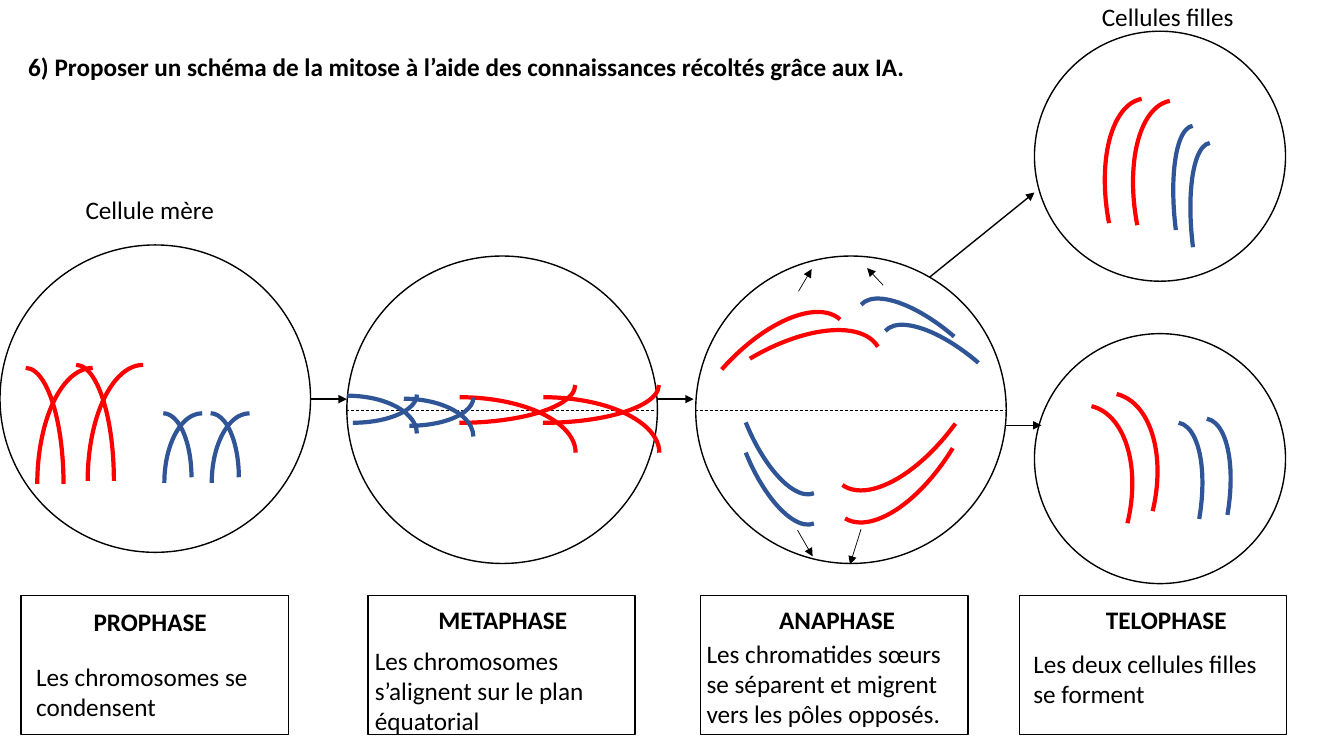
from lxml import etree
from pptx import Presentation
from pptx.dml.color import RGBColor
from pptx.enum.dml import MSO_LINE
from pptx.enum.shapes import MSO_CONNECTOR, MSO_SHAPE as SHP
from pptx.enum.text import MSO_ANCHOR, MSO_AUTO_SIZE, PP_ALIGN
from pptx.oxml.ns import qn
from pptx.util import Inches, Pt

BLACK = RGBColor(0x00, 0x00, 0x00)
WHITE = RGBColor(0xFF, 0xFF, 0xFF)
RED = RGBColor(0xFF, 0x00, 0x00)
BLUE = RGBColor(0x2F, 0x55, 0x97)

TITLE = "6) Proposer un schéma de la mitose à l’aide des connaissances récoltés grâce aux IA."
LABELS = [
    ("Cellule mère", 0.75, 1.88, 2.13),
    ("Cellules filles", 10.83, -0.04, 2.13),
]
PHASES = [
    (0.21, ("PROPHASE", 0.83, 5.97, 2.38),
     ("Les chromosomes se condensent", 0.26, 6.51, 2.6)),
    (3.65, ("METAPHASE", 4.25, 5.95, 1.63),
     ("Les chromosomes s’alignent sur le plan équatorial", 3.62, 6.35, 2.6)),
    (6.95, ("ANAPHASE", 7.63, 5.95, 1.44),
     ("Les chromatides sœurs se séparent et migrent vers les pôles opposés.", 6.91, 6.28, 2.6)),
    (10.11, ("TELOPHASE", 10.87, 5.95, 1.44),
     ("Les deux cellules filles se forment", 10.15, 6.38, 2.6)),
]
BIG, SMALL = (3.08, 3.05), (2.49, 2.48)
CELLS = [
    (0, 2.43, BIG, True), (3.44, 2.54, BIG, True), (6.9, 2.54, BIG, False),
    (10.26, 0.31, SMALL, False), (10.26, 3.31, SMALL, False),
]
STEP_ARROWS = [
    (3.08, 3.96, 3.44, 3.96), (6.52, 3.96, 6.88, 3.96),
    (9.22, 2.75, 10.26, 1.91), (9.97, 4.22, 10.33, 4.22),
]
POLE_ARROWS = [
    (7.92, 2.89, 8.05, 2.67), (8.76, 2.83, 8.6, 2.66),
    (7.91, 5.26, 8.06, 5.52), (8.54, 5.25, 8.43, 5.6),
]
EQUATORS = [(3.43, 4.07, 6.5, 4.07), (6.89, 4.07, 9.97, 4.07)]

# Chromosome: colour, two arm sizes, offset of the second arm, rotation, positions
CHROMOSOMES = [
    (RED, (0.75, 2.3), (1.1, 2.3), (0.49, 0), 0, [(-0.12, 3.65), (0.38, 3.62)]),
    (BLUE, (0.56, 1.27), (0.75, 1.38), (0.29, 0), 0, [(1.34, 4.1), (1.81, 4.1)]),
    (RED, (0.75, 2.3), (1.1, 2.3), (-0.17, 0.67), 90, [(5.01, 2.67), (4.18, 2.67)]),
    (BLUE, (0.56, 1.27), (0.75, 1.38), (-0.15, 0.33), 90, [(3.22, 3.28), (3.78, 3.31)]),
]
CHROMATIDS = [
    (RED, (1.1, 2.3), "H", [
        (7.02, 2.88, 41.5), (7.17, 2.88, 59.1), (8.43, 3.01, 211.3),
        (8.48, 2.73, 215.9), (11.27, 0.98, 349.1), (10.99, 0.96, 349.1)]),
    (RED, (1.24, 2.09), "", [(10.21, 3.88, 13.6), (9.96, 4, 13.6)]),
    (BLUE, (0.73, 1.81), "HV", [
        (8.86, 2.71, 130.9), (9.1, 2.97, 130.9), (7.37, 3.45, 338.1),
        (7.37, 3.15, 338.1), (11.17, 4.18, 189.9), (11.45, 4.14, 189.9)]),
    (BLUE, (0.59, 2.01), "V", [(11.66, 1.24, 172.8), (11.83, 1.41, 172.8)]),
]


def add_outline(shapes, kind, x, y, size, color=BLACK, width=1, filled=False):
    """Add an outlined preset shape."""
    sp = shapes.add_shape(kind, Inches(x), Inches(y), *map(Inches, size))
    sp.shadow.inherit = False
    if filled:
        sp.fill.solid()
        sp.fill.fore_color.rgb = WHITE
    else:
        sp.fill.background()
    sp.line.color.rgb = color
    sp.line.width = Pt(width)
    return sp


def add_arm(shapes, x, y, size, color, rotation, flips):
    """Add one curved chromatid."""
    arc = add_outline(shapes, SHP.ARC, x, y, size, color, 3)
    arc.rotation = rotation
    xfrm = arc._element.spPr.find(qn("a:xfrm"))
    for axis in flips:
        xfrm.set("flip" + axis, "1")


def add_line(s, ends, width, arrow=True):
    """Add an arrow, or a dashed line when there is no arrowhead."""
    cx = s.shapes.add_connector(MSO_CONNECTOR.STRAIGHT, *map(Inches, ends))
    cx.line.color.rgb = BLACK
    cx.line.width = Pt(width)
    if arrow:
        etree.SubElement(cx.line._get_or_add_ln(), qn("a:tailEnd"), type="triangle")
    else:
        cx.line.dash_style = MSO_LINE.DASH
    etree.SubElement(cx._element.spPr, qn("a:effectLst"))


def style_text(tf, text, bold):
    """Write a text in the common font."""
    tf.text = text
    tf.word_wrap = True
    font = tf.paragraphs[0].runs[0].font
    font.name, font.size, font.bold = "Calibri", Pt(18), bold
    font.color.rgb = BLACK


def add_label(s, text, x, y, width, bold=False):
    """Add a text box that grows with its text."""
    box = s.shapes.add_textbox(Inches(x), Inches(y), Inches(width), Inches(0.4))
    style_text(box.text_frame, text, bold)
    box.text_frame.auto_size = MSO_AUTO_SIZE.SHAPE_TO_FIT_TEXT


def add_title(s):
    """Place and format the slide title."""
    title = s.shapes.title
    title.left, title.top = Inches(0.18), Inches(0.31)
    title.width, title.height = Inches(13.15), Inches(1.07)
    tf = title.text_frame
    style_text(tf, TITLE, True)
    tf.vertical_anchor = MSO_ANCHOR.TOP
    tf.auto_size = MSO_AUTO_SIZE.NONE
    p = tf.paragraphs[0]
    p.alignment = PP_ALIGN.LEFT
    p.line_spacing = 1.5
    p.space_before = Pt(0)
    p.space_after = Pt(8)


def main():
    """Build the mitosis slide."""
    prs = Presentation()
    prs.slide_width, prs.slide_height = Inches(13.33), Inches(7.5)
    s = prs.slides.add_slide(prs.slide_layouts[5])
    add_title(s)

    for x, y, size, filled in CELLS:
        add_outline(s.shapes, SHP.OVAL, x, y, size, filled=filled)
    for ends in STEP_ARROWS:
        add_line(s, ends, 1)
    for ends in POLE_ARROWS:
        add_line(s, ends, 0.5)
    for ends in EQUATORS:
        add_line(s, ends, 0.5, arrow=False)

    for color, first, second, (dx, dy), rotation, places in CHROMOSOMES:
        for x, y in places:
            group = s.shapes.add_group_shape()
            add_arm(group.shapes, x, y, first, color, rotation, "")
            add_arm(group.shapes, x + dx, y + dy, second, color, rotation, "H")
    for color, size, flips, places in CHROMATIDS:
        for x, y, rotation in places:
            add_arm(s.shapes, x, y, size, color, rotation, flips)

    for x, heading, body in PHASES:
        add_outline(s.shapes, SHP.RECTANGLE, x, 5.91, (2.65, 1.38), filled=True)
        add_label(s, *heading, bold=True)
        add_label(s, *body)
    for label in LABELS:
        add_label(s, *label)
    prs.save("out.pptx")


if __name__ == "__main__":
    main()
